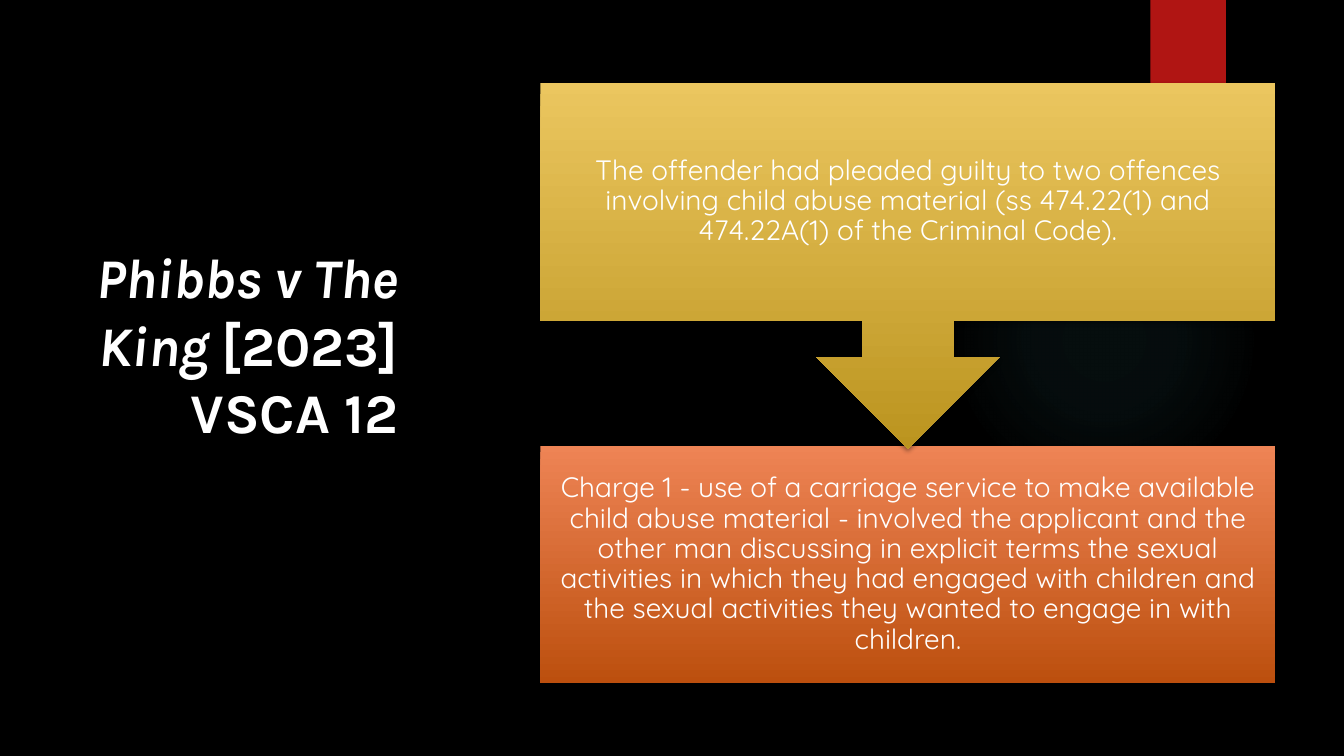
from dataclasses import dataclass

from lxml import etree
from pptx import Presentation
from pptx.dml.color import RGBColor
from pptx.enum.shapes import MSO_SHAPE
from pptx.enum.text import MSO_ANCHOR, PP_ALIGN
from pptx.oxml import parse_xml
from pptx.oxml.ns import nsdecls, qn
from pptx.util import Inches, Pt

RECTANGLE, ELLIPSE = MSO_SHAPE.RECTANGLE, MSO_SHAPE.OVAL
ARROW_CALLOUT = MSO_SHAPE.DOWN_ARROW_CALLOUT
MIDDLE, BOTTOM = MSO_ANCHOR.MIDDLE, MSO_ANCHOR.BOTTOM
CENTER, RIGHT = PP_ALIGN.CENTER, PP_ALIGN.RIGHT
TITLE_ONLY = 5


@dataclass(frozen=True)
class Theme:
    """Colours, fonts and type sizes of the slide."""
    background: str = "000000"
    text: str = "FFFFFF"
    ribbon: str = "B01513"
    gold: tuple = (("EBC65F", 0, 100), ("BB941F", 100, 100))
    orange: tuple = (("EE8455", 0, 100), ("BC4F0E", 100, 100))
    glow: tuple = (("50B9C1", 0, 7), ("50B9C1", 36, 6), ("50B9C1", 69, 0))
    title_font: str = "Karla"
    body_font: str = "Quicksand"
    title_size: int = 40
    body_size: int = 20


THEME = Theme()
PLEA = ("The offender had pleaded guilty to two offences involving child abuse material "
        "(ss 474.22(1) and 474.22A(1) of the Criminal Code).")
CHARGE = ("Charge 1 - use of a carriage service to make available child abuse material - "
          "involved the applicant and the other man discussing in explicit terms the sexual "
          "activities in which they had engaged with children and the sexual activities they "
          "wanted to engage in with children.")


def solid(fill, color):
    """Fill with one colour."""
    fill.solid()
    fill.fore_color.rgb = RGBColor.from_string(color)


def gradient(shape, stops, radial=False):
    """Fill a shape with (colour, position, opacity) stops, downwards or from the centre."""
    stop_xml = "".join(
        f'<a:gs pos="{position * 1000}"><a:srgbClr val="{color}">'
        f'<a:alpha val="{opacity * 1000}"/></a:srgbClr></a:gs>'
        for color, position, opacity in stops)
    direction = ('<a:path path="circle"><a:fillToRect l="50000" t="50000" r="50000" b="50000"/>'
                 '</a:path>' if radial else '<a:lin ang="5400000" scaled="0"/>')
    shape.fill.background()
    properties = shape.element.spPr
    properties.replace(properties.find(qn("a:noFill")), parse_xml(
        f'<a:gradFill {nsdecls("a")} rotWithShape="1"><a:gsLst>{stop_xml}</a:gsLst>'
        f'{direction}</a:gradFill>'))


def plain_shape(slide, kind, box, shadow=True):
    """Add a shape without outline, with a soft shadow below it if wanted."""
    shape = slide.shapes.add_shape(kind, *map(Inches, box))
    shape.line.fill.background()
    shape.shadow.inherit = False
    if shadow:
        effects = shape.element.spPr.find(qn("a:effectLst"))
        outer = etree.SubElement(effects, qn("a:outerShdw"), blurRad=str(Pt(3)),
                                 dist=str(Pt(2)), dir="5400000", rotWithShape="0")
        color = etree.SubElement(outer, qn("a:srgbClr"), val="000000")
        etree.SubElement(color, qn("a:alpha"), val="45000")
    return shape


def style(paragraph, font_name, size, alignment):
    """Set the font and alignment of a paragraph."""
    paragraph.alignment = alignment
    paragraph.font.name = font_name
    paragraph.font.size = Pt(size)
    paragraph.font.color.rgb = RGBColor.from_string(THEME.text)


def add_backdrop(slide, box):
    """Place the background, the glow and the ribbon in the slide box."""
    left, top, width, _ = box
    solid(slide.background.fill, THEME.background)
    glow = plain_shape(slide, ELLIPSE, (left + width - 3.92, top + 1.83, 3.08, 3.08), shadow=False)
    gradient(glow, THEME.glow, radial=True)
    ribbon = plain_shape(slide, RECTANGLE, (left + width - 1.92, top, 0.75, 1.25))
    solid(ribbon.fill, THEME.ribbon)


def add_case_title(slide, box):
    """Put the case citation in the title placeholder."""
    title = slide.shapes.title
    title.left, title.top, title.width, title.height = map(Inches, box)
    frame = title.text_frame
    frame.word_wrap = True
    frame.vertical_anchor = BOTTOM
    citation = frame.paragraphs[0]
    for words, italic in (("Phibbs v The King ", True), ("[2023] VSCA 12", False)):
        run = citation.add_run()
        run.text = words
        run.font.italic = italic
    style(citation, THEME.title_font, THEME.title_size, RIGHT)
    citation.font.bold = True


def add_step(slide, kind, box, stops, words):
    """Add one step of the process with its text."""
    step = plain_shape(slide, kind, box)
    gradient(step, stops)
    frame = step.text_frame
    frame.word_wrap = True
    frame.vertical_anchor = MIDDLE
    frame.margin_left = frame.margin_right = Inches(0.16)
    frame.margin_top = frame.margin_bottom = Inches(0.16)
    paragraph = frame.paragraphs[0]
    paragraph.text = words
    paragraph.line_spacing = 0.9
    style(paragraph, THEME.body_font, THEME.body_size, CENTER)


def add_process(slide, box):
    """Stack the plea, with its arrow, above the charge."""
    left, top, width, height = box
    charge_height, arrow_overlap = 2.36, 0.03
    charge_top = top + height - charge_height
    callout_height = charge_top - top + arrow_overlap
    add_step(slide, RECTANGLE, (left, charge_top, width, charge_height), THEME.orange, CHARGE)
    add_step(slide, ARROW_CALLOUT, (left, top, width, callout_height), THEME.gold, PLEA)


def main():
    """Build and save the slide."""
    presentation = Presentation()
    presentation.slide_width, presentation.slide_height = Inches(13.33), Inches(7.5)
    slide = presentation.slides.add_slide(presentation.slide_layouts[TITLE_ONLY])
    add_backdrop(slide, (0, 0, 13.33, 7.5))
    add_case_title(slide, (0.64, 1.84, 3.41, 2.62))
    add_process(slide, (5.36, 0.82, 7.29, 5.96))
    presentation.save("out.pptx")


if __name__ == "__main__":
    main()
